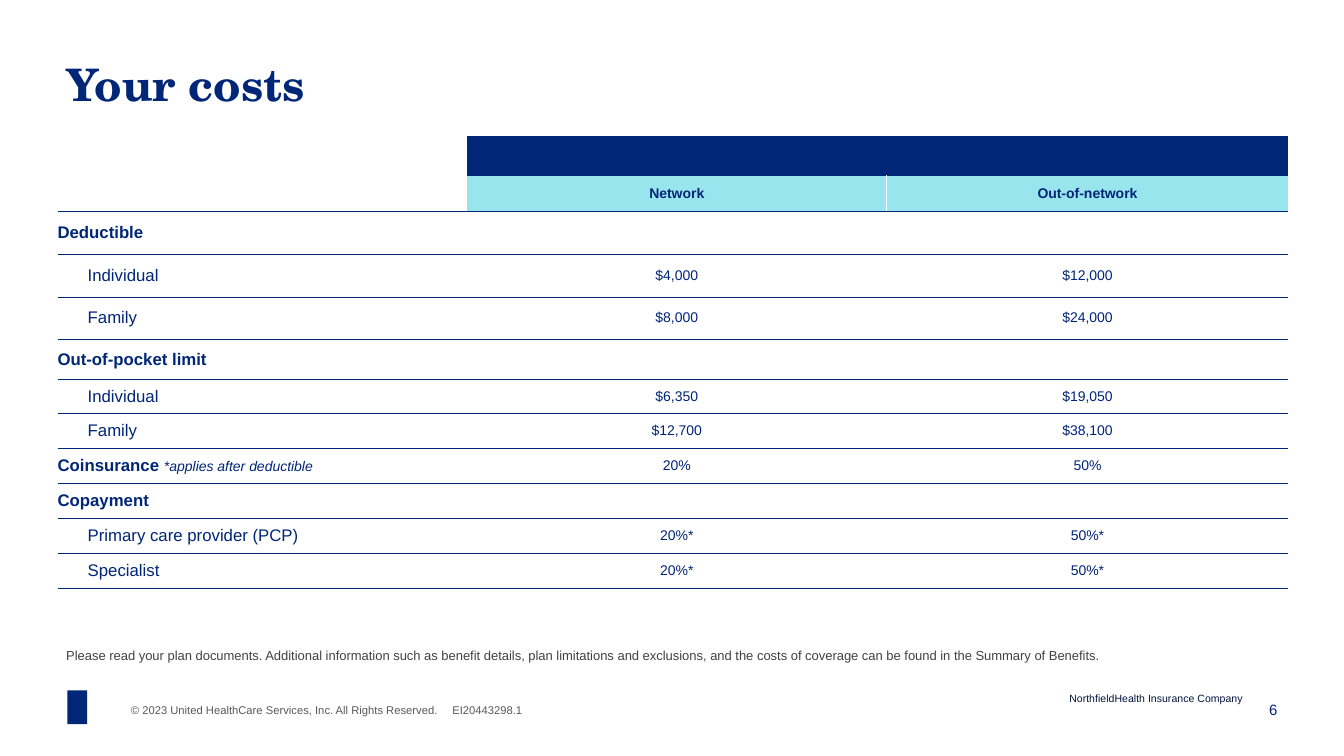
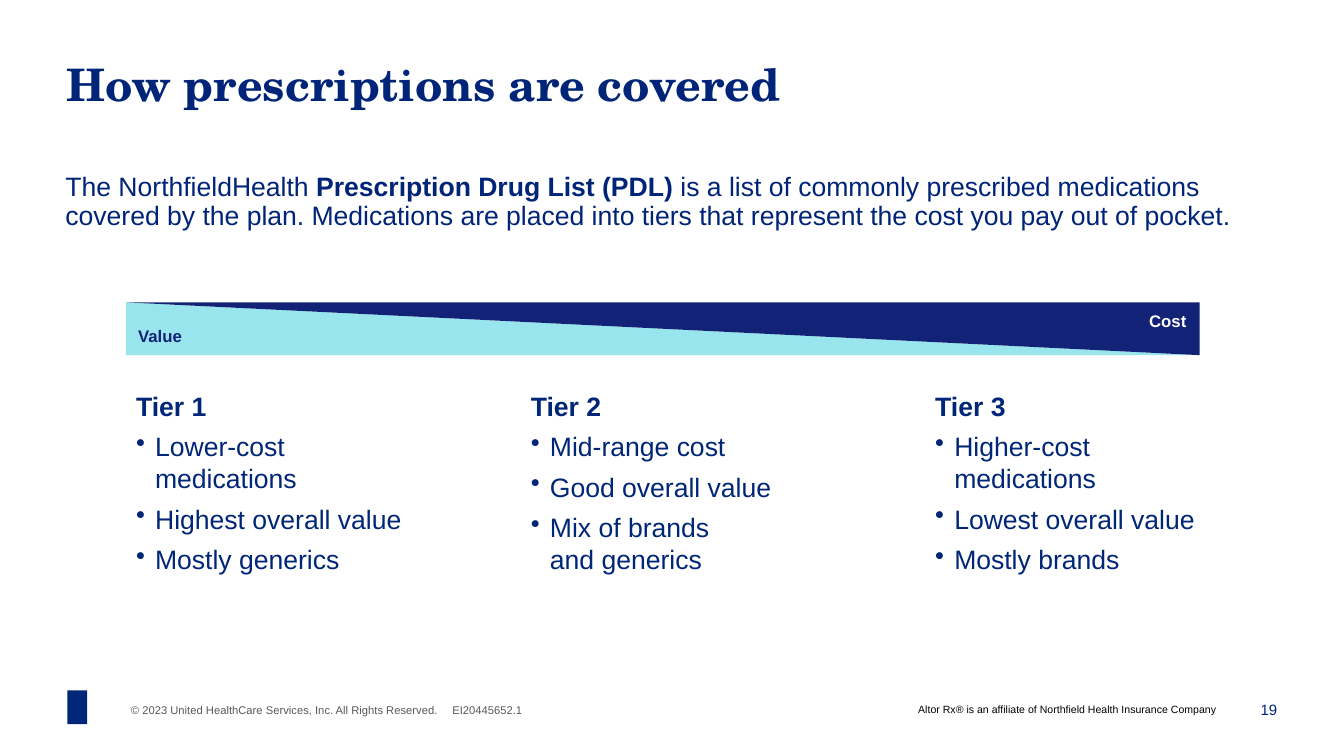
from dataclasses import dataclass, replace

from lxml import etree
from pptx import Presentation
from pptx import util as u
from pptx.dml.color import RGBColor
from pptx.enum import shapes, text
from pptx.oxml.ns import qn

NAVY, BLUE, INDIGO, AQUA = "002677", "002477", "122377", "99E5EE"
MIDNIGHT, GRAY, CHARCOAL, WHITE, BLACK = "00133C", "595959", "424242", "FFFFFF", "000000"
LEFT, CENTER, RIGHT = text.PP_ALIGN.LEFT, text.PP_ALIGN.CENTER, text.PP_ALIGN.RIGHT
TOP, MIDDLE, BOTTOM = text.MSO_ANCHOR.TOP, text.MSO_ANCHOR.MIDDLE, text.MSO_ANCHOR.BOTTOM
INSETS = (0.25, 0.13, 0.25, 0.13)
NO_INSETS = (0, 0, 0, 0)


@dataclass(frozen=True)
class Style:
    size: float
    color: str = NAVY
    bold: bool = False
    italic: bool = False
    font: str = "Arial"


@dataclass(frozen=True)
class Box:
    """Place on the slide, in centimetres."""
    left: float
    top: float
    width: float
    height: float

    def lengths(self) -> tuple:
        return tuple(u.Cm(n) for n in (self.left, self.top, self.width, self.height))


@dataclass(frozen=True)
class Frame:
    """What every slide carries around its content."""
    title: str
    number: int
    form_code: str
    accent: str


@dataclass(frozen=True)
class CostRow:
    label: str
    height: float
    network: str = ""
    out_of_network: str = ""
    note: str = ""
    heading: bool = False
    closes_group: bool = False


@dataclass(frozen=True)
class Tier:
    name: str
    left: float
    points: tuple


COST_ROWS = (
    CostRow("Deductible", 1.08, heading=True),
    CostRow("Individual", 1.07, "$4,000", "$12,000"),
    CostRow("Family", 1.07, "$8,000", "$24,000", closes_group=True),
    CostRow("Out-of-pocket limit", 1, heading=True),
    CostRow("Individual", 0.87, "$6,350", "$19,050"),
    CostRow("Family", 0.88, "$12,700", "$38,100"),
    CostRow("Coinsurance ", 0.88, "20%", "50%", note="*applies after deductible",
            heading=True, closes_group=True),
    CostRow("Copayment", 0.88, heading=True),
    CostRow("Primary care provider (PCP)", 0.88, "20%*", "50%*"),
    CostRow("Specialist", 0.88, "20%*", "50%*"),
)
TIERS = (
    Tier("Tier 1", 3.18, ("Lower-cost medications", "Highest overall value", "Mostly generics")),
    Tier("Tier 2", 13.13, ("Mid-range cost", "Good overall value", "Mix of brands\vand generics")),
    Tier("Tier 3", 23.32, ("Higher-cost medications", "Lowest overall value", "Mostly brands")),
)


def rgb(color: str) -> RGBColor:
    return RGBColor.from_string(color)


def format_run(run, style: Style) -> None:
    font = run.font
    font.name, font.size = style.font, u.Pt(style.size)
    font.bold, font.italic = style.bold, style.italic
    font.color.rgb = rgb(style.color)


def write(paragraph, words: str, style: Style, align=LEFT) -> None:
    paragraph.text = words
    paragraph.alignment = align
    for run in paragraph.runs:
        format_run(run, style)


def append(paragraph, words: str, style: Style) -> None:
    run = paragraph.add_run()
    run.text = words
    format_run(run, style)


def add_text(slide, box: Box, words: str, style: Style, align=LEFT, anchor=TOP,
             insets: tuple = INSETS, wrap: bool = True):
    """Add a text box and return its text frame."""
    frame = slide.shapes.add_textbox(*box.lengths()).text_frame
    frame.word_wrap = wrap
    frame.vertical_anchor = anchor
    frame.margin_left, frame.margin_top, frame.margin_right, frame.margin_bottom = (
        u.Cm(n) for n in insets)
    write(frame.paragraphs[0], words, style, align)
    return frame


def paint(shape, color: str) -> None:
    shape.shadow.inherit = False
    shape.fill.solid()
    shape.fill.fore_color.rgb = rgb(color)
    shape.line.fill.background()


def add_framed_slide(deck, frame: Frame):
    """Add a blank slide with its title, mark and footer."""
    slide = deck.slides.add_slide(deck.slide_layouts[6])
    small = Style(8, GRAY)
    add_text(slide, Box(3.05, 17.6, 8.76, 0.61),
             "© 2023 United HealthCare Services, Inc. All Rights Reserved.", small)
    add_text(slide, Box(11.15, 17.6, 2.4, 0.61), frame.form_code, small, wrap=False)
    mark = slide.shapes.add_shape(shapes.MSO_SHAPE.RECTANGLE, *Box(1.7, 17.4, 0.5, 0.85).lengths())
    paint(mark, NAVY)
    add_text(slide, Box(1.42, 1.3, 30.84, 2.95), frame.title,
             Style(32, frame.accent, bold=True, font="TeX Gyre Schola"))
    add_text(slide, Box(31.14, 17.35, 1.3, 1.04), str(frame.number),
             Style(10.7, frame.accent), RIGHT, MIDDLE)
    return slide


def set_borders(cell, edges: dict) -> None:
    """Draw the given edges (L, R, T, B), each a colour and a width in points."""
    properties = cell._tc.get_or_add_tcPr()
    for place, side in enumerate("LRTB"):
        line = etree.Element(qn(f"a:ln{side}"))
        properties.insert(place, line)
        if side not in edges:
            etree.SubElement(line, qn("a:noFill"))
            continue
        color, points = edges[side]
        line.set("w", str(u.Pt(points)))
        fill = etree.SubElement(line, qn("a:solidFill"))
        etree.SubElement(fill, qn("a:srgbClr")).set("val", color)


def fill_cell(cell, words: str, style: Style, align=CENTER, indent: float = 0) -> None:
    cell.vertical_anchor = MIDDLE
    cell.margin_left = u.Cm(indent)
    cell.margin_right = cell.margin_top = cell.margin_bottom = 0
    if words:
        write(cell.text_frame.paragraphs[0], words, style, align)


def add_cost_table(slide) -> None:
    heights = (1, 0.9, *(row.height for row in COST_ROWS))
    widths = (10.31, 10.59, 10.11)
    box = Box(1.45, 3.43, sum(widths), sum(heights))
    table = slide.shapes.add_table(len(heights), len(widths), *box.lengths()).table
    table.first_row = table.horz_banding = False
    for column, width in zip(table.columns, widths):
        column.width = u.Cm(width)
    for row, height in zip(table.rows, heights):
        row.height = u.Cm(height)

    label, value = Style(12), Style(10, BLUE)
    header = Style(10, bold=True)
    for column, words in enumerate(("", "Network", "Out-of-network")):
        fill_cell(table.cell(0, column), "", header)
        fill_cell(table.cell(1, column), words, header)
    for index, row in enumerate(COST_ROWS, start=2):
        name = table.cell(index, 0)
        fill_cell(name, row.label, replace(label, bold=row.heading), LEFT,
                  0 if row.heading else 0.76)
        if row.note:
            append(name.text_frame.paragraphs[0], row.note, Style(10, italic=True))
        fill_cell(table.cell(index, 1), row.network, value)
        fill_cell(table.cell(index, 2), row.out_of_network, value)

    rules = [0.5, 1, *(1 if row.closes_group else 0.25 for row in COST_ROWS)]
    header_fills = (NAVY, AQUA)
    for index in range(len(heights)):
        for column in range(len(widths)):
            cell = table.cell(index, column)
            if index < len(header_fills) and column:
                cell.fill.solid()
                cell.fill.fore_color.rgb = rgb(header_fills[index])
            else:
                cell.fill.background()
            edges = {}
            if index or column:
                edges["T"] = (NAVY, rules[max(index - 1, 0)])
                edges["B"] = (NAVY, rules[index])
            if index == 1 and not column:
                del edges["T"]
            if index and column:
                edges["L"] = (WHITE, 1)
            if index and column < len(widths) - 1:
                edges["R"] = (WHITE, 1)
            set_borders(cell, edges)
    table.cell(0, 1).merge(table.cell(0, 2))


def add_triangle(slide, corners: tuple, color: str) -> None:
    points = [(u.Cm(x), u.Cm(y)) for x, y in corners]
    builder = slide.shapes.build_freeform(*points[0])
    builder.add_line_segments(points[1:], close=True)
    paint(builder.convert_to_shape(), color)


def add_value_cost_band(slide) -> None:
    left, top, right, bottom = 3.18, 7.62, 30.23, 8.95
    add_triangle(slide, ((left, top), (left, bottom), (right, bottom)), AQUA)
    add_triangle(slide, ((right, bottom), (right, top), (left, top)), INDIGO)
    add_text(slide, Box(3.48, 8.2, 6.76, 0.89), "Value", Style(12, INDIGO, bold=True),
             insets=NO_INSETS)
    add_text(slide, Box(26.09, 7.82, 3.81, 0.89), "Cost", Style(12, WHITE, bold=True), RIGHT,
             insets=NO_INSETS)


def add_bullet(paragraph, indent: float) -> None:
    properties = paragraph._p.get_or_add_pPr()
    properties.set("marL", str(u.Cm(indent)))
    properties.set("indent", str(-u.Cm(indent)))
    etree.SubElement(properties, qn("a:buChar")).set("char", "•")


def add_tier(slide, tier: Tier) -> None:
    style = Style(19)
    frame = add_text(slide, Box(tier.left, 9.7, 7.62, 4.95), tier.name, replace(style, bold=True))
    for point in tier.points:
        paragraph = frame.add_paragraph()
        add_bullet(paragraph, 0.48)
        write(paragraph, point, style)
    for paragraph in frame.paragraphs:
        paragraph.space_after = u.Pt(6)


def build_costs(deck) -> None:
    slide = add_framed_slide(deck, Frame("Your costs", 6, "EI20443298.1", NAVY))
    add_cost_table(slide)
    add_text(slide, Box(1.42, 15.82, 29.9, 1.02),
             "Please read your plan documents. Additional information such as benefit details, "
             "plan limitations and exclusions, and the costs of coverage can be found in the "
             "Summary of Benefits.", Style(9.3, CHARCOAL), anchor=BOTTOM)
    add_text(slide, Box(14.86, 17.32, 16.71, 0.58), "NorthfieldHealth Insurance Company",
             Style(7.5, MIDNIGHT), RIGHT)


def build_prescriptions(deck) -> None:
    slide = add_framed_slide(
        deck, Frame("How prescriptions are covered", 19, "EI20445652.1", BLUE))
    style = Style(19, BLUE)
    intro = add_text(slide, Box(1.4, 4.24, 30.86, 2.54), "The NorthfieldHealth ", style)
    paragraph = intro.paragraphs[0]
    paragraph.line_spacing = 0.9
    append(paragraph, "Prescription Drug List (PDL)", replace(style, bold=True))
    append(paragraph, " is a list of commonly prescribed medications covered by the plan. "
           "Medications are placed into tiers that represent the cost you pay out of pocket.",
           style)
    add_value_cost_band(slide)
    for tier in TIERS:
        add_tier(slide, tier)
    add_text(slide, Box(22.89, 17.58, 9.37, 0.58),
             "Altor Rx® is an affiliate of Northfield Health Insurance Company",
             Style(7.5, BLACK))


def main() -> None:
    deck = Presentation()
    deck.slide_width, deck.slide_height = u.Cm(33.87), u.Cm(19.05)
    build_costs(deck)
    build_prescriptions(deck)
    deck.save("out.pptx")


if __name__ == "__main__":
    main()
